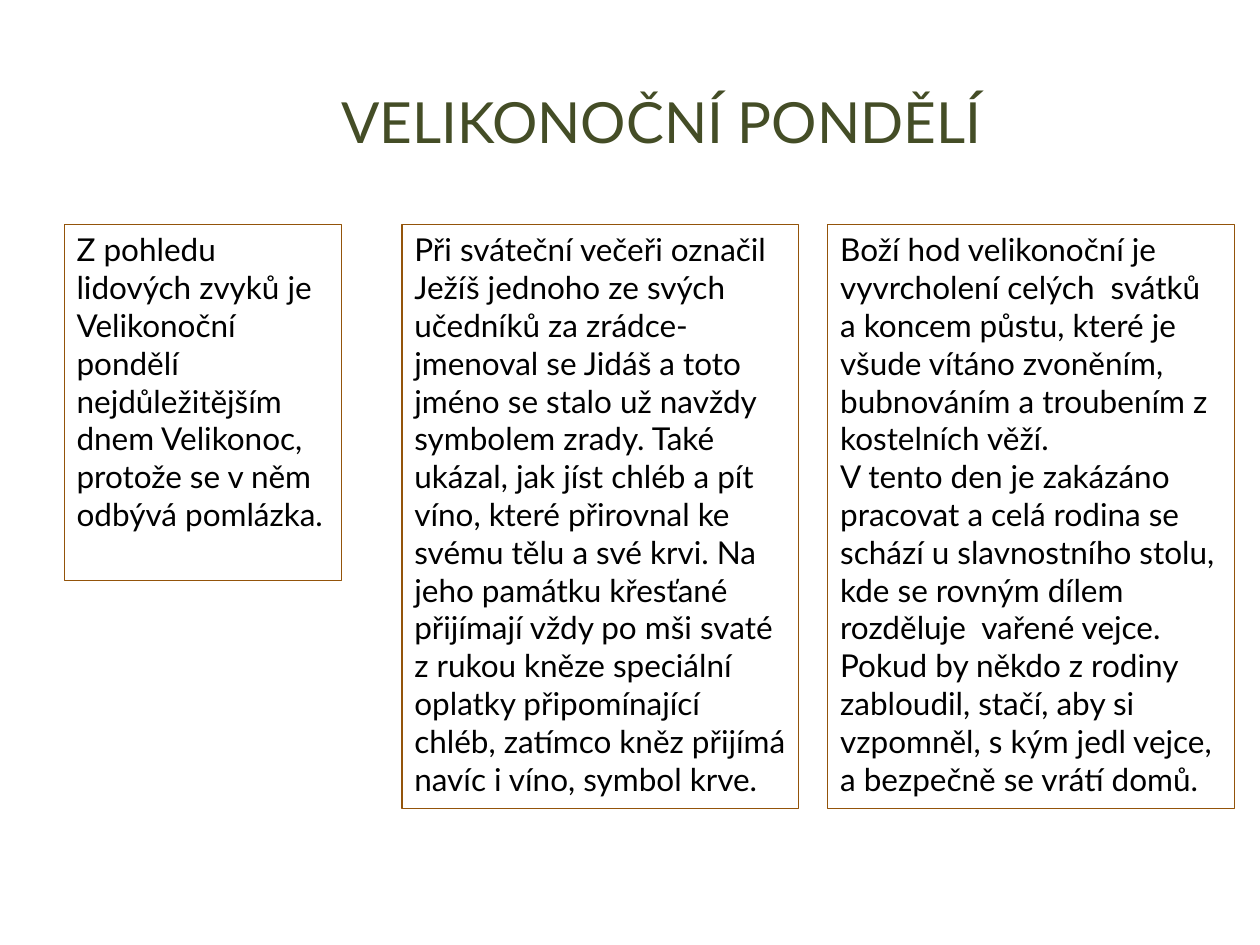
from dataclasses import dataclass

from pptx import Presentation
from pptx.dml.color import RGBColor
from pptx.enum.shapes import MSO_SHAPE as Shape
from pptx.enum.text import MSO_ANCHOR as Anchor, MSO_AUTO_SIZE as AutoSize, PP_ALIGN as Align
from pptx.util import Inches, Pt


@dataclass(frozen=True)
class Theme:
    font: str = "Lato"
    title_color: RGBColor = RGBColor(0x44, 0x4D, 0x26)
    text_color: RGBColor = RGBColor(0, 0, 0)
    border_color: RGBColor = RGBColor(0x93, 0x54, 0x0A)
    title_size: float = 32.4
    text_size: float = 18
    border_width: float = 0.75


THEME = Theme()
TITLE = "VELIKONOČNÍ PONDĚLÍ"
PANEL_TOP = 1.78
PANELS = [
    {
        "left": 0.51, "width": 2.2, "height": 2.83,
        "paragraphs": [
            "Z pohledu lidových zvyků je Velikonoční pondělí nejdůležitějším dnem "
            "Velikonoc, protože se v něm odbývá pomlázka.",
        ],
    },
    {
        "left": 3.19, "width": 3.15, "height": 4.64,
        "paragraphs": [
            "Při sváteční večeři označil Ježíš jednoho ze svých učedníků za "
            "zrádce-jmenoval se Jidáš a toto jméno se stalo už navždy symbolem zrady. "
            "Také ukázal, jak jíst chléb a pít víno, které přirovnal ke svému tělu a "
            "své krvi. Na jeho památku křesťané přijímají vždy po mši svaté z rukou "
            "kněze speciální oplatky připomínající chléb, zatímco kněz přijímá navíc "
            "i víno, symbol krve.",
        ],
    },
    {
        "left": 6.57, "width": 3.23, "height": 4.64,
        "paragraphs": [
            "Boží hod velikonoční je vyvrcholení celých  svátků a koncem půstu, které "
            "je všude vítáno zvoněním, bubnováním a troubením z kostelních věží.",
            "V tento den je zakázáno  pracovat a celá rodina se schází u slavnostního "
            "stolu, kde se rovným dílem  rozděluje  vařené vejce. Pokud by někdo z "
            "rodiny  zabloudil, stačí, aby si vzpomněl, s kým jedl vejce, a bezpečně "
            "se vrátí domů.",
        ],
    },
]


def add_run(paragraph, text, size, color, alignment):
    paragraph.alignment = alignment
    run = paragraph.add_run()
    run.text = text
    run.font.name = THEME.font
    run.font.size = Pt(size)
    run.font.color.rgb = color


def set_title(slide):
    title = slide.shapes.title
    title.left, title.top = Inches(0.5), Inches(0.5)
    title.width, title.height = Inches(9.5), Inches(0.92)
    frame = title.text_frame
    frame.vertical_anchor = Anchor.MIDDLE
    frame.auto_size = AutoSize.NONE
    add_run(frame.paragraphs[0], TITLE, THEME.title_size, THEME.title_color, Align.CENTER)


def add_panel(slide, left, width, height, paragraphs):
    panel = slide.shapes.add_shape(
        Shape.RECTANGLE, Inches(left), Inches(PANEL_TOP), Inches(width), Inches(height)
    )
    panel.shadow.inherit = False
    panel.fill.background()
    panel.line.color.rgb = THEME.border_color
    panel.line.width = Pt(THEME.border_width)
    frame = panel.text_frame
    frame.word_wrap = True
    frame.auto_size = AutoSize.NONE
    frame.vertical_anchor = Anchor.TOP
    for index, text in enumerate(paragraphs):
        paragraph = frame.add_paragraph() if index else frame.paragraphs[0]
        add_run(paragraph, text, THEME.text_size, THEME.text_color, Align.LEFT)


def main():
    presentation = Presentation()
    presentation.slide_width = Inches(10)
    presentation.slide_height = Inches(7.5)
    slide = presentation.slides.add_slide(presentation.slide_layouts[5])
    set_title(slide)
    for panel in PANELS:
        add_panel(slide, **panel)
    presentation.save("out.pptx")


if __name__ == "__main__":
    main()
